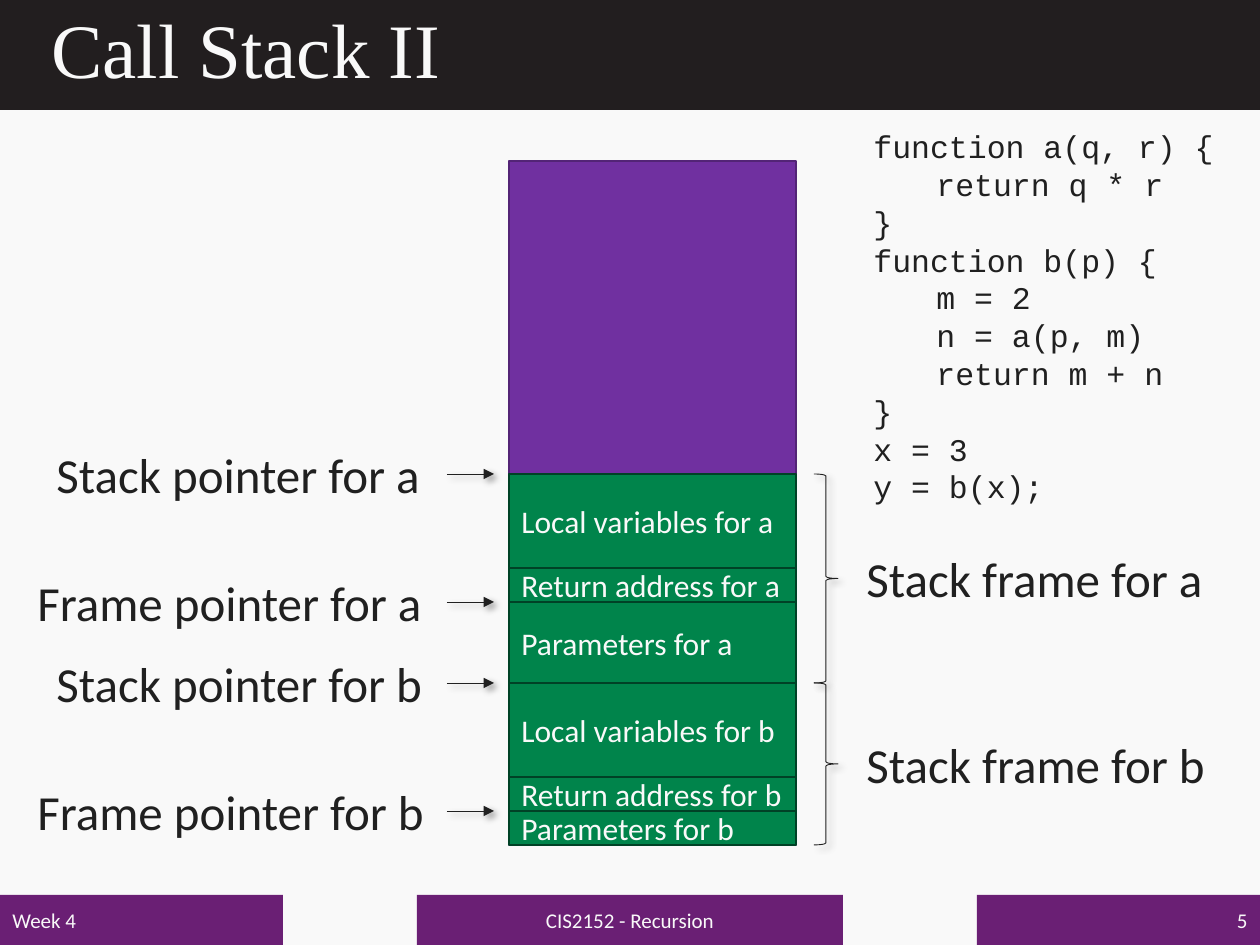
"""Build the Call Stack II slide: a stack of frames, its pointers and the code."""
from pptx import Presentation
from pptx import util as u
from pptx.dml.color import RGBColor
from pptx.enum import shapes, text
from pptx.oxml import parse_xml
from pptx.oxml.ns import nsdecls

EMU_PER_PX = 914400 / 126
PAPER = RGBColor(0xF9, 0xF9, 0xF9)
INK = RGBColor(0x20, 0x20, 0x20)
HEADER = RGBColor(0x22, 0x1E, 0x1F)
FOOTER = RGBColor(0x6A, 0x1F, 0x74)
FREE = RGBColor(0x70, 0x30, 0xA0)
FREE_EDGE = RGBColor(0x53, 0x24, 0x76)
USED = RGBColor(0x00, 0x84, 0x4B)
USED_EDGE = RGBColor(0x00, 0x42, 0x26)

TITLE = {"name": "Times New Roman", "size": u.Pt(44)}
FOOT = {"name": "Calibri", "size": u.Pt(12)}
CELL = {"name": "Calibri", "size": u.Pt(18)}
LABEL = {"name": "Calibri", "size": u.Pt(28)}
CODE = {"name": "Courier New", "size": u.Pt(18)}

STACK_LEFT, STACK_TOP, STACK_WIDTH, STACK_HEIGHT = 509, 161, 287, 684
USED_TOP = 474
CELL_HEIGHTS = [
    ("Local variables for a", 94),
    ("Return address for a", 34),
    ("Parameters for a", 81),
    ("Local variables for b", 94),
    ("Return address for b", 34),
    ("Parameters for b", 34),
]
LABEL_HEIGHT = 72
SOURCE_CODE = """function a(q, r) {
\treturn q * r
}
function b(p) {
\tm = 2
\tn = a(p, m)
\treturn m + n
}
x = 3
y = b(x);"""


def px(*lengths):
    """Turn pixel lengths into EMU."""
    return [u.Emu(round(length * EMU_PER_PX)) for length in lengths]


def write(frame, wording, font, colour, align=text.PP_ALIGN.LEFT, spacing=None):
    """Fill a text frame, one paragraph a line."""
    for number, line in enumerate(wording.split("\n")):
        paragraph = frame.add_paragraph() if number else frame.paragraphs[0]
        paragraph.alignment = align
        paragraph.line_spacing = spacing
        run = paragraph.add_run()
        run.text = line
        for key, value in font.items():
            setattr(run.font, key, value)
        run.font.color.rgb = colour


def add_bar(slide, box, fill, edge=None):
    """Add a flat rectangle, with an outline if an edge colour is given."""
    bar = slide.shapes.add_shape(shapes.MSO_SHAPE.RECTANGLE, *px(*box))
    bar.shadow.inherit = False
    bar.fill.solid()
    bar.fill.fore_color.rgb = fill
    if edge is None:
        bar.line.fill.background()
    else:
        bar.line.color.rgb = edge
        bar.line.width = u.Pt(1)
    bar.text_frame.word_wrap = True
    bar.text_frame.vertical_anchor = text.MSO_ANCHOR.MIDDLE
    return bar


def add_fitted_text(slide, box, wording, font):
    """Add an unwrapped text box that fits its text."""
    frame = slide.shapes.add_textbox(*px(*box)).text_frame
    frame.word_wrap = False
    frame.auto_size = text.MSO_AUTO_SIZE.SHAPE_TO_FIT_TEXT
    write(frame, wording, font, INK)


def draw_thin(stroke):
    """Give a stroke a thin dark line and a soft shadow."""
    stroke.line.color.rgb = INK
    stroke.line.width = u.Pt(0.5)
    stroke._element.spPr.append(parse_xml(
        f'<a:effectLst {nsdecls("a")}>'
        '<a:outerShdw blurRad="50800" dist="38100" dir="2700000" algn="tl" rotWithShape="0">'
        '<a:srgbClr val="000000"><a:alpha val="40000"/></a:srgbClr>'
        '</a:outerShdw></a:effectLst>'))


def add_pointer(slide, kind, left, width, y):
    """Add a pointer label and its arrow to the stack."""
    add_fitted_text(slide, (left, y - LABEL_HEIGHT // 2, width, LABEL_HEIGHT), kind, LABEL)
    arrow = slide.shapes.add_connector(shapes.MSO_CONNECTOR.STRAIGHT, *px(447, y, 494, y))
    draw_thin(arrow)
    arrow.line._get_or_add_ln().append(
        parse_xml(f'<a:tailEnd {nsdecls("a")} type="triangle"/>'))


def add_frame_brace(slide, function, top, bottom):
    """Add the brace around one stack frame and its label."""
    brace = slide.shapes.add_shape(
        shapes.MSO_SHAPE.RIGHT_BRACE, *px(814, top, 24, bottom - top))
    brace.fill.background()
    draw_thin(brace)
    label_top = (top + bottom - LABEL_HEIGHT) // 2
    add_fitted_text(slide, (854, label_top, 368, LABEL_HEIGHT),
                    f"Stack frame for {function}", LABEL)


def add_header_and_footer(slide):
    """Add the title band and the three footer bars."""
    add_bar(slide, (0, 0, 1260, 110), HEADER)
    title = slide.shapes.add_textbox(*px(39, 0, 1183, 108)).text_frame
    title.word_wrap = True
    title.vertical_anchor = text.MSO_ANCHOR.MIDDLE
    write(title, "Call Stack II", TITLE, PAPER, spacing=0.9)
    for left, width, wording, align in (
        (0, 283, "Week 4", text.PP_ALIGN.LEFT),
        (417, 426, "CIS2152 - Recursion", text.PP_ALIGN.CENTER),
        (977, 283, "5", text.PP_ALIGN.RIGHT),
    ):
        bar = add_bar(slide, (left, 895, width, 50), FOOTER)
        write(bar.text_frame, wording, FOOT, PAPER, align)


def add_stack(slide):
    """Add the stack and return the top of each cell by its wording."""
    add_bar(slide, (STACK_LEFT, STACK_TOP, STACK_WIDTH, STACK_HEIGHT), FREE, FREE_EDGE)
    tops, y = {}, USED_TOP
    for wording, height in CELL_HEIGHTS:
        cell = add_bar(slide, (STACK_LEFT, y, STACK_WIDTH, height), USED, USED_EDGE)
        write(cell.text_frame, wording, CELL, PAPER)
        tops[wording] = y
        y += height
    return tops


def main():
    """Build and save the slide."""
    deck = Presentation()
    deck.slide_width, deck.slide_height = px(1260, 945)
    slide = deck.slides.add_slide(deck.slide_layouts[6])
    slide.background.fill.solid()
    slide.background.fill.fore_color.rgb = PAPER

    add_header_and_footer(slide)
    tops = add_stack(slide)
    add_fitted_text(slide, (861, 121, 381, 394), SOURCE_CODE, CODE)

    ends = {"a": tops["Local variables for b"], "b": STACK_TOP + STACK_HEIGHT}
    for function, bottom in ends.items():
        top = tops[f"Local variables for {function}"]
        add_frame_brace(slide, function, top, bottom)
        add_pointer(slide, f"Stack pointer for {function}", 44, 396, top)
        add_pointer(slide, f"Frame pointer for {function}", 25, 416,
                    tops[f"Parameters for {function}"])
    deck.save("out.pptx")


if __name__ == "__main__":
    main()
